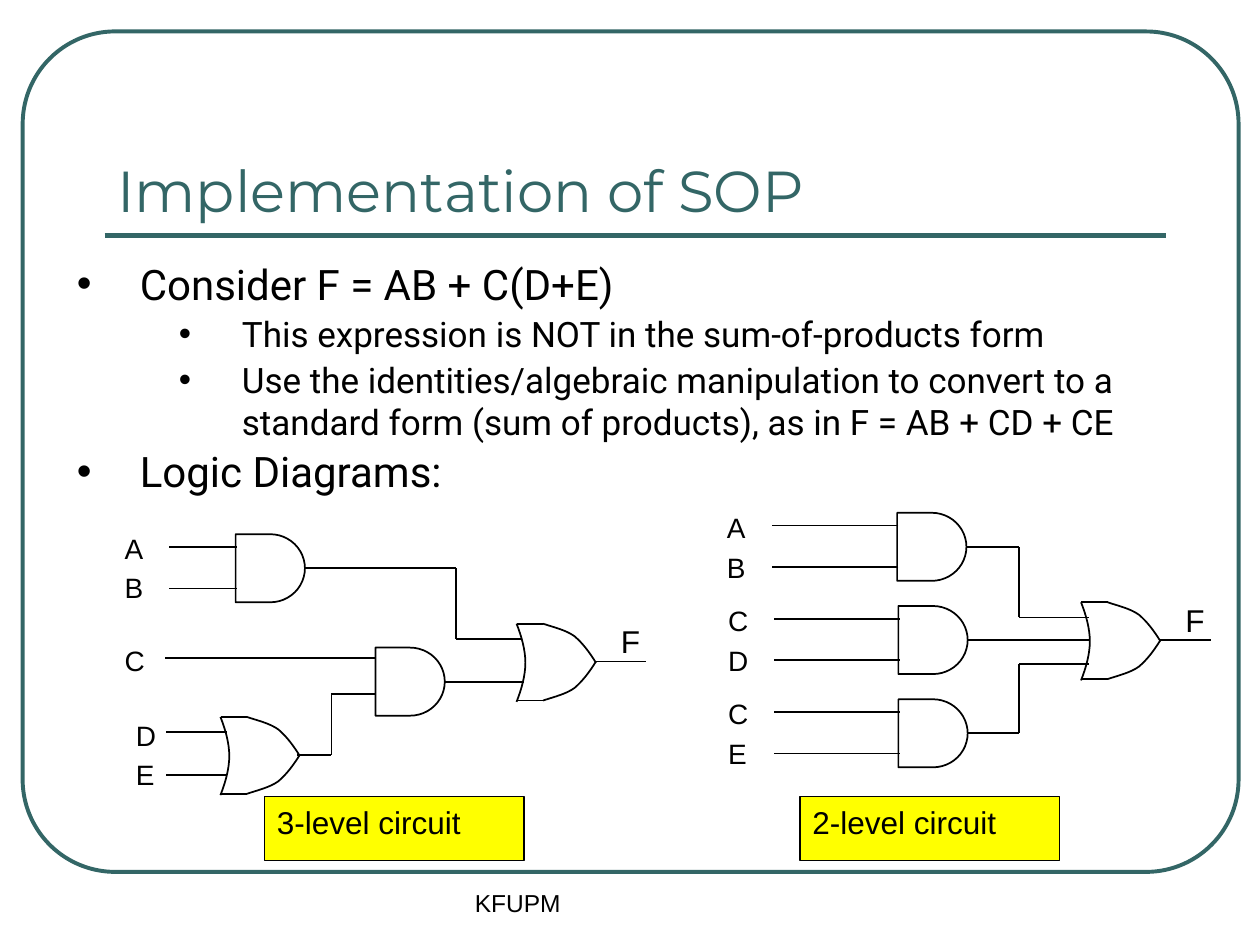
"""Build a slide that compares three-level and two-level logic circuits."""
from typing import NamedTuple

from lxml import etree
from pptx import Presentation
from pptx.dml.color import RGBColor
from pptx.enum.shapes import MSO_CONNECTOR, MSO_SHAPE
from pptx.enum.text import MSO_ANCHOR, MSO_AUTO_SIZE, PP_ALIGN
from pptx.oxml.ns import qn
from pptx.shapes.autoshape import Shape
from pptx.slide import Slide
from pptx.text.text import TextFrame, _Paragraph
from pptx.util import Emu, Pt

EMU_PER_PX = 9144
TEAL = RGBColor(0x33, 0x66, 0x66)
BLACK = RGBColor(0, 0, 0)
YELLOW = RGBColor(0xFF, 0xFF, 0)
STRAIGHT = MSO_CONNECTOR.STRAIGHT
DELAY = MSO_SHAPE.FLOWCHART_DELAY
RECTANGLE = MSO_SHAPE.RECTANGLE
ROUNDED = MSO_SHAPE.ROUNDED_RECTANGLE
LEFT = PP_ALIGN.LEFT
TOP = MSO_ANCHOR.TOP
BOTTOM = MSO_ANCHOR.BOTTOM
NO_AUTOFIT = MSO_AUTO_SIZE.NONE
RIGHT_SIDE = 3
AND_WIDTH, AND_HEIGHT = 55, 54
OR_TIP, OR_AXIS = 63, 30
OR_BACK = ((0, 0), (4, 10), (7, 21), (7, 31), (7, 41), (4, 52), (0, 62))
OR_UPPER = ((21, 0), (30, 3), (39, 5), (46, 10), (53, 16), (58, 23), (63, 31))
OR_LOWER = tuple((dx, 61 - dy) for dx, dy in OR_UPPER)

Point = tuple[int, int]


class Inputs(NamedTuple):
    names: str
    label_x: int
    label_ys: tuple[int, int]
    wire_start: int
    wire_end: int
    wire_ys: tuple[int, int]


class Bullet(NamedTuple):
    text: str
    size: int
    level: int
    indent: int


class ProductTerm(NamedTuple):
    names: str
    x: int
    y: int
    entry: int


BULLETS = (
    Bullet("Consider F = AB + C(D+E)", 24, 0, 50),
    Bullet("This expression is NOT in the sum-of-products form", 20, 1, 131),
    Bullet("Use the identities/algebraic manipulation to convert to a standard form "
           "(sum of products), as in F = AB + CD + CE", 20, 1, 131),
    Bullet("Logic Diagrams:", 24, 0, 50),
)
PRODUCT_TERMS = (
    ProductTerm("AB", 712, 407, 490),
    ProductTerm("CD", 713, 481, 508),
    ProductTerm("CE", 713, 555, 527),
)


def px(length: int) -> Emu:
    return Emu(length * EMU_PER_PX)


def write(paragraph: _Paragraph, text: str, *, size: int, font: str = "Arial",
          color: RGBColor = BLACK) -> None:
    paragraph.alignment = LEFT
    run = paragraph.add_run()
    run.text = text
    run.font.size = Pt(size)
    run.font.name = font
    run.font.color.rgb = color


def place(shape: Shape, x: int, y: int, width: int, height: int,
          anchor: MSO_ANCHOR) -> TextFrame:
    shape.left, shape.top, shape.width, shape.height = map(px, (x, y, width, height))
    shape.text_frame.auto_size = NO_AUTOFIT
    shape.text_frame.vertical_anchor = anchor
    return shape.text_frame


def add_bullet(paragraph: _Paragraph, bullet: Bullet) -> None:
    paragraph.level = bullet.level
    write(paragraph, bullet.text, size=bullet.size, font="Roboto")
    properties = paragraph._p.get_or_add_pPr()
    properties.set("marL", str(px(bullet.indent)))
    properties.set("indent", str(px(-50)))
    for spacing_tag in ("a:spcBef", "a:spcAft"):
        spacing = etree.SubElement(properties, qn(spacing_tag))
        etree.SubElement(spacing, qn("a:spcPct")).set("val", "5000")
    etree.SubElement(properties, qn("a:buChar")).set("char", "•")


def add_label(slide: Slide, text: str, x: int, y: int, width: int = 35,
              height: int = 37, size: int = 16) -> None:
    frame = slide.shapes.add_textbox(*map(px, (x, y, width, height))).text_frame
    frame.word_wrap = True
    write(frame.paragraphs[0], text, size=size)


def style_outline(shape: Shape, color: RGBColor = BLACK, weight: float = 1) -> Shape:
    shape.shadow.inherit = False
    shape.fill.background()
    shape.line.color.rgb = color
    shape.line.width = Pt(weight)
    return shape


def add_wire(slide: Slide, *points: Point, source: Shape | None = None,
             color: RGBColor = BLACK, weight: float = 1) -> None:
    for index, (start, end) in enumerate(zip(points, points[1:])):
        segment = slide.shapes.add_connector(STRAIGHT, *map(px, (*start, *end)))
        segment.line.color.rgb = color
        segment.line.width = Pt(weight)
        etree.SubElement(segment._element.spPr, qn("a:effectLst"))
        if source is not None and index == 0:
            segment.begin_connect(source, RIGHT_SIDE)


def add_curve(slide: Slide, x: int, y: int, controls: tuple[Point, ...]) -> None:
    start, *others = [(px(x + dx), px(y + dy)) for dx, dy in controls]
    builder = slide.shapes.build_freeform(*start, scale=1.0)
    builder.add_line_segments(others, close=False)
    shape = style_outline(builder.convert_to_shape())
    corners = list(shape._element.iter(qn("a:lnTo")))
    outline = corners[0].getparent()
    for first in range(0, len(corners), 3):
        bezier = etree.SubElement(outline, qn("a:cubicBezTo"))
        for corner in corners[first:first + 3]:
            bezier.append(corner[0])
            outline.remove(corner)


def add_or_gate(slide: Slide, x: int, y: int) -> None:
    add_curve(slide, x, y, OR_BACK)
    for half in (OR_UPPER, OR_LOWER):
        edge, shoulder = y + half[0][1], x + half[0][0]
        add_wire(slide, (x, edge), (shoulder, edge))
        add_curve(slide, x, y, half)


def add_and_gate(slide: Slide, x: int, y: int) -> Shape:
    size = (AND_WIDTH, AND_HEIGHT)
    return style_outline(slide.shapes.add_shape(DELAY, *map(px, (x, y, *size))))


def add_inputs(slide: Slide, inputs: Inputs) -> None:
    for name, label_y, wire_y in zip(inputs.names, inputs.label_ys, inputs.wire_ys):
        add_label(slide, name, inputs.label_x, label_y)
        add_wire(slide, (inputs.wire_end, wire_y), (inputs.wire_start, wire_y))


def add_output(slide: Slide, x: int, y: int) -> None:
    add_label(slide, "F", x + 73, y - 6, height=40, size=18)
    add_or_gate(slide, x, y)
    add_wire(slide, (x + OR_TIP, y + OR_AXIS), (x + OR_TIP + 40, y + OR_AXIS))


def add_caption(slide: Slide, text: str, x: int) -> None:
    box = slide.shapes.add_shape(RECTANGLE, *map(px, (x, 632, 206, 51)))
    style_outline(box, weight=0.75)
    box.fill.solid()
    box.fill.fore_color.rgb = YELLOW
    box.text_frame.vertical_anchor = TOP
    write(box.text_frame.paragraphs[0], text, size=18)


def add_three_level(slide: Slide) -> None:
    add_output(slide, 410, 495)
    add_inputs(slide, Inputs("AB", 89, (417, 448), 134, 188, (434, 467)))
    add_inputs(slide, Inputs("DE", 98, (565, 596), 132, 180, (581, 615)))
    add_label(slide, "C", 89, 506)
    add_wire(slide, (298, 522), (131, 522))
    ab_gate, c_gate = add_and_gate(slide, 187, 424), add_and_gate(slide, 298, 514)
    add_or_gate(slide, 175, 569)
    add_wire(slide, (242, 451), (362, 451), (362, 507), (414, 507), source=ab_gate)
    add_wire(slide, (236, 599), (263, 599), (263, 551), (298, 551))
    add_wire(slide, (353, 541), (416, 541), source=c_gate)


def add_two_level(slide: Slide) -> None:
    add_output(slide, 858, 478)
    for names, x, y, entry in PRODUCT_TERMS:
        add_inputs(slide, Inputs(names, x - 145, (y - 7, y + 25), x - 99, x + 1,
                                 (y + 10, y + 43)))
        gate = add_and_gate(slide, x, y)
        axis = y + AND_HEIGHT // 2
        bends = () if entry == axis else ((809, axis), (809, entry))
        add_wire(slide, (x + AND_WIDTH, axis), *bends, (864, entry), source=gate)


def main() -> None:
    deck = Presentation()
    deck.slide_width, deck.slide_height = px(1000), px(750)
    slide = deck.slides.add_slide(deck.slide_layouts[1])
    frame = slide.shapes.add_shape(ROUNDED, *map(px, (18, 25, 965, 667)))
    style_outline(frame, TEAL, 2.25).adjustments[0] = 0.11
    add_wire(slide, (83, 187), (925, 187), color=TEAL, weight=3)
    title = place(slide.shapes.title, 83, 58, 841, 125, BOTTOM).paragraphs[0]
    write(title, "Implementation of SOP", size=33, font="Montserrat", color=TEAL)
    body = place(slide.placeholders[1], 51, 200, 874, 211, TOP)
    for index, bullet in enumerate(BULLETS):
        add_bullet(body.add_paragraph() if index else body.paragraphs[0], bullet)
    add_two_level(slide)
    add_three_level(slide)
    add_caption(slide, "3-level circuit", 210)
    add_caption(slide, "2-level circuit", 635)
    add_label(slide, "KFUPM", 367, 700, 316, 50, 14)
    deck.save("out.pptx")


if __name__ == "__main__":
    main()
